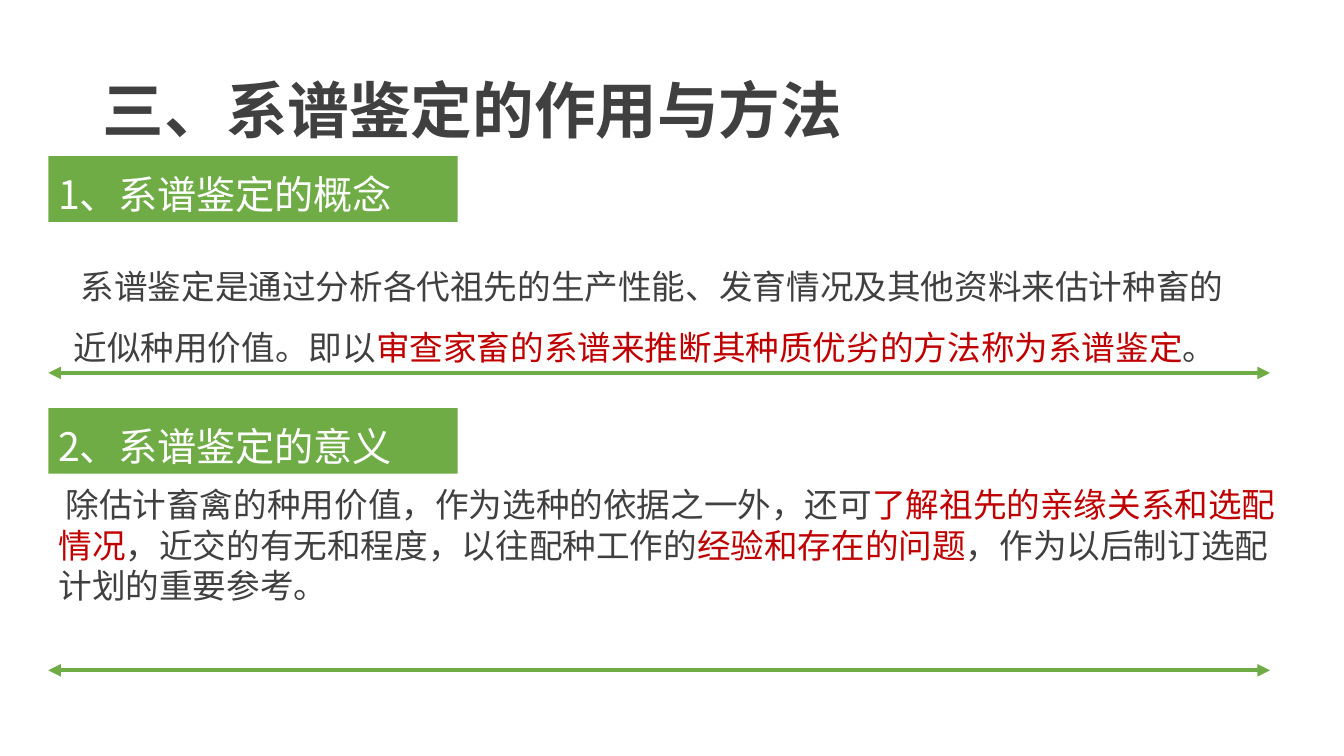
from dataclasses import dataclass

from pptx import Presentation
from pptx.dml.color import RGBColor
from pptx.enum.shapes import MSO_CONNECTOR, MSO_SHAPE
from pptx.enum.text import MSO_ANCHOR, MSO_AUTO_SIZE, PP_ALIGN
from pptx.oxml.ns import qn
from pptx.util import Inches, Pt
from lxml.etree import SubElement


@dataclass(frozen=True)
class Theme:
    face: str = "Noto Sans CJK SC"
    ink: RGBColor = RGBColor(0x40, 0x40, 0x40)
    red: RGBColor = RGBColor(0xC0, 0x00, 0x00)
    green: RGBColor = RGBColor(0x6F, 0xAC, 0x46)
    white: RGBColor = RGBColor(0xFF, 0xFF, 0xFF)
    head: Pt = Pt(44)
    label: Pt = Pt(28)
    text: Pt = Pt(24)
    rule: Pt = Pt(3)


def apply(item, form):
    for name, value in form.items():
        setattr(item, name, value)


class Page:
    def __init__(self, deck, theme):
        self.theme = theme
        self.slide = deck.slides.add_slide(deck.slide_layouts[3])
        self.col = deck.slide_width / 100
        self.row = deck.slide_height / 100

    def box(self, x, y, w, h):
        return (round(x * self.col), round(y * self.row),
                round(w * self.col), round(h * self.row))

    def place(self, shape, area):
        apply(shape, dict(zip(("left", "top", "width", "height"), self.box(*area))))

    def frame(self, shape, **form):
        base = {"word_wrap": True, "auto_size": MSO_AUTO_SIZE.NONE,
                "vertical_anchor": MSO_ANCHOR.TOP, "margin_left": 0,
                "margin_right": 0, "margin_top": 0, "margin_bottom": 0}
        apply(shape.text_frame, base | form)
        return shape.text_frame.paragraphs[0]

    def phrase(self, para, parts, size, space, bold=False, track=0):
        apply(para, {"alignment": PP_ALIGN.LEFT, "line_spacing": space,
                     "space_before": Pt(0), "space_after": Pt(0)})
        for words, color in parts:
            run = para.add_run()
            run.text = words
            apply(run.font, {"name": self.theme.face, "size": size, "bold": bold})
            run.font.color.rgb = color
            props = run._r.get_or_add_rPr()
            SubElement(props, qn("a:ea")).set("typeface", self.theme.face)
            if track:
                props.set("spc", str(track))

    def title(self, words, area):
        shape = self.slide.shapes.title
        self.place(shape, area)
        para = self.frame(shape, vertical_anchor=MSO_ANCHOR.MIDDLE,
                          margin_left=Inches(0.1), margin_right=Inches(0.1))
        self.phrase(para, [(words, self.theme.ink)], self.theme.head, 0.9, bold=True)

    def label(self, words, area):
        shape = self.slide.shapes.add_shape(MSO_SHAPE.RECTANGLE, *self.box(*area))
        shape.shadow.inherit = False
        shape.fill.solid()
        shape.fill.fore_color.rgb = self.theme.green
        shape.line.fill.background()
        para = self.frame(shape, margin_left=Inches(0.1), margin_top=Inches(0.13))
        self.phrase(para, [(words, self.theme.white)], self.theme.label, Pt(34), track=-10)

    def body(self, slot, parts, area, space):
        shape = self.slide.placeholders[slot]
        self.place(shape, area)
        para = self.frame(shape)
        props = para._p.get_or_add_pPr()
        props.set("marL", str(Inches(0.01)))
        props.set("indent", str(Inches(0.07)))
        SubElement(props, qn("a:buNone"))
        self.phrase(para, parts, self.theme.text, space)

    def arrow(self, x, y, w):
        left, top, wide, _ = self.box(x, y, w, 0)
        line = self.slide.shapes.add_connector(
            MSO_CONNECTOR.STRAIGHT, left, top, left + wide, top)
        line.line.color.rgb = self.theme.green
        line.line.width = self.theme.rule
        stroke = line.line._get_or_add_ln()
        for end in ("a:headEnd", "a:tailEnd"):
            SubElement(stroke, qn(end)).set("type", "triangle")
        SubElement(line._element.spPr, qn("a:effectLst"))


def main():
    deck = Presentation()
    deck.slide_width, deck.slide_height = Inches(13.33), Inches(7.5)
    theme = Theme()
    page = Page(deck, theme)
    ink, red = theme.ink, theme.red
    edge = 3.6

    page.title("三、系谱鉴定的作用与方法", (6.9, 5.33, 86.25, 19.33))
    for words, y in (("1、系谱鉴定的概念", 20.67), ("2、系谱鉴定的意义", 54)):
        page.label(words, (edge, y, 30.45, 8.67))
    page.body(1, [
        ("系谱鉴定是通过分析各代祖先的生产性能、发育情况及其他资料来估计种畜的近似种用价值。即以", ink),
        ("审查家畜的系谱来推断其种质优劣的方法称为系谱鉴定", red),
        ("。", ink),
    ], (5.4, 32.4, 87, 16.4), Pt(43.5))
    page.body(2, [
        ("除估计畜禽的种用价值，作为选种的依据之一外，还可", ink),
        ("了解祖先的亲缘关系和选配情况", red),
        ("，近交的有无和程度，以往配种工作的", ink),
        ("经验和存在的问题", red),
        ("，作为以后制订选配计划的重要参考。", ink),
    ], (4.28, 64, 91.1, 16.4), Pt(29))
    for y in (49.33, 88.67):
        page.arrow(edge, y, 90.9)
    deck.save("out.pptx")


if __name__ == "__main__":
    main()
